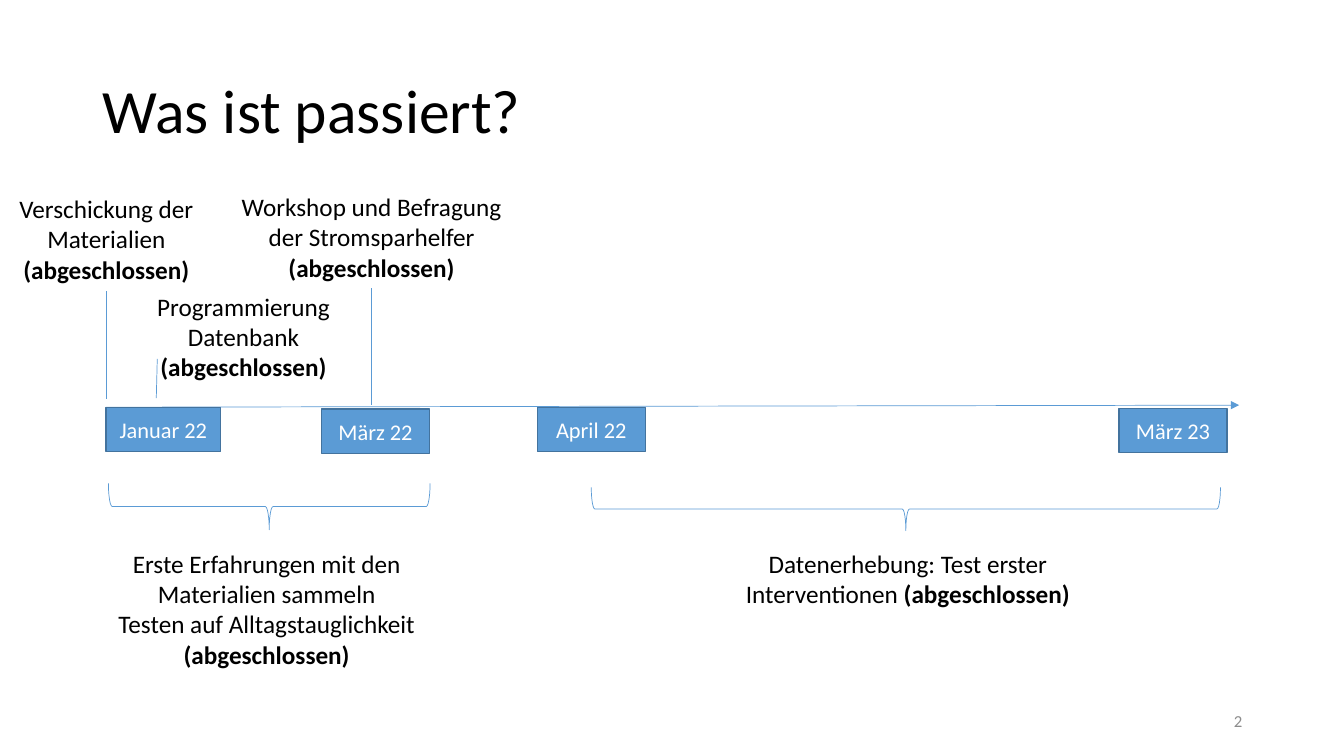
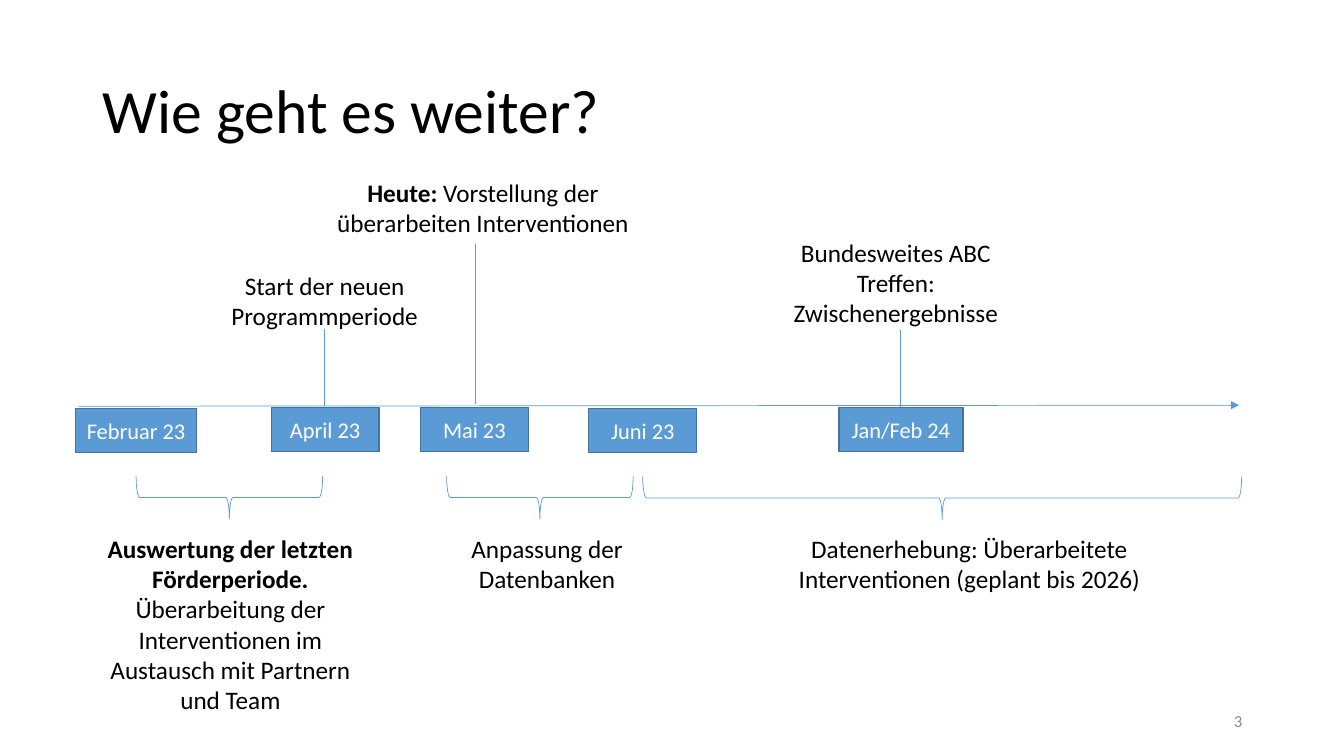
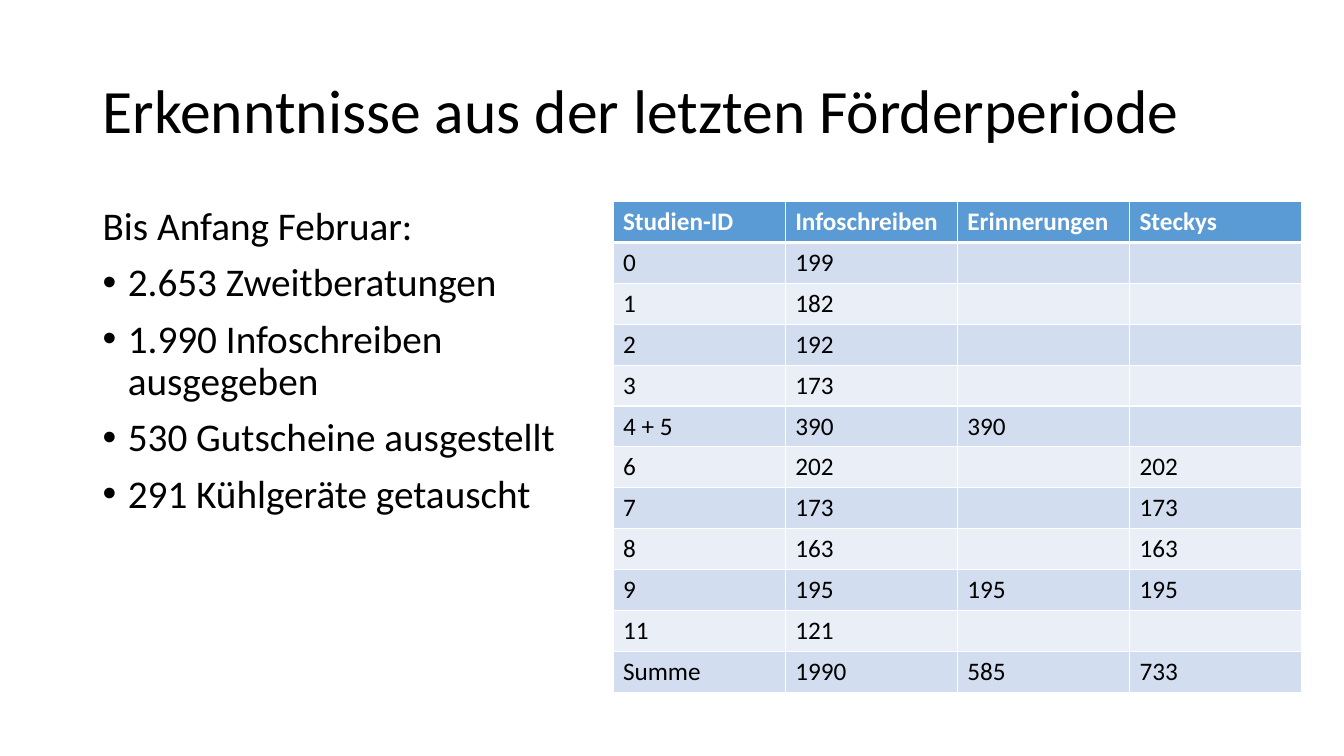
"""Build three slides on the progress of a study: two timelines and a results table."""
from dataclasses import dataclass

from lxml import etree
from pptx import Presentation
from pptx import util as u
from pptx.dml.color import RGBColor
from pptx.enum import shapes, text
from pptx.oxml import ns
from pptx.slide import Slide
from pptx.table import _Cell as Cell
from pptx.text.text import TextFrame, _Paragraph as Paragraph

EMU_PER_PX = 9144
FONT = "Calibri"
BLACK = RGBColor(0x00, 0x00, 0x00)
WHITE = RGBColor(0xFF, 0xFF, 0xFF)
GREY = RGBColor(0x8C, 0x8C, 0x8C)
BLUE = RGBColor(0x5B, 0x9B, 0xD5)
DARK_BLUE = RGBColor(0x43, 0x73, 0x9E)
BAND_COLOURS = (RGBColor(0xEA, 0xEF, 0xF7), RGBColor(0xD2, 0xDE, 0xEF))

CENTER = text.PP_ALIGN.CENTER
MIDDLE = text.MSO_ANCHOR.MIDDLE


@dataclass(frozen=True)
class Box:
    left: int
    top: int
    width: int
    height: int

    def emu(self) -> tuple[int, int, int, int]:
        return px(self.left), px(self.top), px(self.width), px(self.height)


@dataclass(frozen=True)
class Span:
    text: str
    bold: bool = False


@dataclass(frozen=True)
class Caption:
    box: Box
    paragraphs: tuple[tuple[Span, ...], ...]


@dataclass(frozen=True)
class Milestone:
    label: str
    left: int
    top: int = 404
    width: int = 107


@dataclass(frozen=True)
class Line:
    start_x: int
    start_y: int
    end_x: int
    end_y: int


@dataclass(frozen=True)
class Timeline:
    title: str
    number: str
    axis: Line
    milestones: tuple[Milestone, ...]
    markers: tuple[Line, ...]
    braces: tuple[Box, ...]
    captions: tuple[Caption, ...]


TITLE_BOX = Box(92, 40, 1150, 145)
NUMBER_BOX = Box(942, 695, 300, 40)
BULLET_BOX = Box(92, 200, 516, 476)
TABLE_BOX = Box(608, 200, 683, 487)
MILESTONE_HEIGHT = 44
DONE = Span("(abgeschlossen)", True)

TIMELINES = (
    Timeline(
        "Was ist passiert?",
        "2",
        Line(105, 404, 1229, 402),
        (
            Milestone("Januar 22", 105, width=114),
            Milestone("März 22", 319, 406),
            Milestone("April 22", 533),
            Milestone("März 23", 1110, 405),
        ),
        (
            Line(105, 289, 105, 396),
            Line(368, 286, 368, 402),
            Line(156, 356, 155, 395),
        ),
        (Box(108, 479, 319, 46), Box(587, 483, 624, 43)),
        (
            Caption(Box(6, 187, 199, 101), ((Span("Verschickung der Materialien "), DONE),)),
            Caption(Box(219, 185, 299, 101), ((Span("Workshop und Befragung der Stromsparhelfer "), DONE),)),
            Caption(Box(92, 284, 299, 101), ((Span("Programmierung Datenbank "), DONE),)),
            Caption(
                Box(92, 539, 345, 131),
                (
                    (Span("Erste Erfahrungen mit den Materialien sammeln"),),
                    (Span("Testen auf Alltagstauglichkeit\n"), DONE),
                ),
            ),
            Caption(Box(724, 539, 353, 71), ((Span("Datenerhebung: Test erster Interventionen "), DONE),)),
        ),
    ),
    Timeline(
        "Wie geht es weiter?",
        "3",
        Line(78, 403, 1229, 402),
        (
            Milestone("Februar 23", 75, 405, 120),
            Milestone("April 23", 269),
            Milestone("Mai 23", 417),
            Milestone("Juni 23", 584, 405),
            Milestone("Jan/Feb 24", 832, width=123),
        ),
        (
            Line(322, 326, 322, 403),
            Line(471, 242, 471, 401),
            Line(893, 327, 893, 404),
        ),
        (Box(135, 472, 185, 43), Box(443, 472, 185, 43), Box(638, 472, 594, 43)),
        (
            Caption(Box(215, 263, 214, 71), ((Span("Start der neuen Programmperiode"),),)),
            Caption(
                Box(320, 171, 318, 71),
                ((Span("Heute: ", True), Span("Vorstellung der überarbeiten Interventionen")),),
            ),
            Caption(Box(768, 230, 241, 101), ((Span("Bundesweites ABC Treffen: Zwischenergebnisse"),),)),
            Caption(
                Box(79, 524, 299, 192),
                (
                    (Span("Auswertung der letzten Förderperiode.", True),),
                    (Span("Überarbeitung der Interventionen im Austausch mit Partnern und Team"),),
                ),
            ),
            Caption(Box(393, 524, 299, 71), ((Span("Anpassung der Datenbanken"),),)),
            Caption(
                Box(765, 524, 393, 71),
                ((Span("Datenerhebung: Überarbeitete Interventionen (geplant bis 2026)"),),),
            ),
        ),
    ),
)

RESULTS_TITLE = "Erkenntnisse aus der letzten Förderperiode"
RESULTS_INTRO = "Bis Anfang Februar:"
RESULTS_BULLETS = (
    "2.653 Zweitberatungen",
    "1.990 Infoschreiben ausgegeben",
    "530 Gutscheine ausgestellt",
    "291 Kühlgeräte getauscht",
)
RESULTS_ROWS = (
    ("Studien-ID", "Infoschreiben", "Erinnerungen", "Steckys"),
    ("0", "199", "", ""),
    ("1", "182", "", ""),
    ("2", "192", "", ""),
    ("3", "173", "", ""),
    ("4 + 5", "390", "390", ""),
    ("6", "202", "", "202"),
    ("7", "173", "", "173"),
    ("8", "163", "", "163"),
    ("9", "195", "195", "195"),
    ("11", "121", "", ""),
    ("Summe", "1990", "585", "733"),
)


def px(length: int) -> u.Emu:
    return u.Emu(length * EMU_PER_PX)


def style_paragraph(paragraph: Paragraph, size: int, colour: RGBColor = BLACK) -> None:
    paragraph.font.name = FONT
    paragraph.font.size = u.Pt(size)
    paragraph.font.color.rgb = colour


def add_text_frame(slide: Slide, box: Box) -> TextFrame:
    frame = slide.shapes.add_textbox(*box.emu()).text_frame
    frame.word_wrap = True
    return frame


def new_paragraph(frame: TextFrame, index: int) -> Paragraph:
    return frame.add_paragraph() if index else frame.paragraphs[0]


def add_title(slide: Slide, title: str) -> None:
    frame = add_text_frame(slide, TITLE_BOX)
    frame.vertical_anchor = MIDDLE
    paragraph = frame.paragraphs[0]
    paragraph.text = title
    paragraph.line_spacing = 0.9
    style_paragraph(paragraph, 44)


def add_number(slide: Slide, number: str) -> None:
    frame = add_text_frame(slide, NUMBER_BOX)
    frame.vertical_anchor = MIDDLE
    paragraph = frame.paragraphs[0]
    paragraph.text = number
    paragraph.alignment = text.PP_ALIGN.RIGHT
    style_paragraph(paragraph, 12, GREY)


def add_line(slide: Slide, line: Line, arrow: bool = False) -> None:
    connector = slide.shapes.add_connector(
        shapes.MSO_CONNECTOR.STRAIGHT,
        px(line.start_x), px(line.start_y), px(line.end_x), px(line.end_y),
    )
    connector.line.color.rgb = BLUE
    connector.line.width = u.Pt(0.5)
    properties = connector._element.spPr
    if arrow:
        etree.SubElement(properties.find(ns.qn("a:ln")), ns.qn("a:tailEnd"), type="triangle")
    etree.SubElement(properties, ns.qn("a:effectLst"))


def add_milestone(slide: Slide, milestone: Milestone) -> None:
    box = Box(milestone.left, milestone.top, milestone.width, MILESTONE_HEIGHT)
    shape = slide.shapes.add_shape(shapes.MSO_SHAPE.RECTANGLE, *box.emu())
    shape.shadow.inherit = False
    shape.fill.solid()
    shape.fill.fore_color.rgb = BLUE
    shape.line.color.rgb = DARK_BLUE
    shape.line.width = u.Pt(1)
    shape.text_frame.vertical_anchor = MIDDLE
    paragraph = shape.text_frame.paragraphs[0]
    paragraph.text = milestone.label
    paragraph.alignment = CENTER
    style_paragraph(paragraph, 16, WHITE)


def add_brace(slide: Slide, box: Box) -> None:
    """Draw a downward brace that fills the box once it is turned."""
    shift = (box.width - box.height) // 2
    upright = Box(box.left + shift, box.top - shift, box.height, box.width)
    shape = slide.shapes.add_shape(shapes.MSO_SHAPE.LEFT_BRACE, *upright.emu())
    shape.rotation = 270
    shape.shadow.inherit = False
    shape.fill.background()
    shape.line.color.rgb = BLUE
    shape.line.width = u.Pt(0.5)


def add_caption(slide: Slide, caption: Caption) -> None:
    frame = add_text_frame(slide, caption.box)
    frame.auto_size = text.MSO_AUTO_SIZE.SHAPE_TO_FIT_TEXT
    for index, spans in enumerate(caption.paragraphs):
        paragraph = new_paragraph(frame, index)
        paragraph.alignment = CENTER
        style_paragraph(paragraph, 18)
        for span in spans:
            run = paragraph.add_run()
            run.text = span.text.rstrip("\n")
            run.font.bold = span.bold
            if span.text.endswith("\n"):
                paragraph.add_line_break()


def add_timeline(slide: Slide, timeline: Timeline) -> None:
    add_title(slide, timeline.title)
    add_number(slide, timeline.number)
    add_line(slide, timeline.axis, arrow=True)
    for milestone in timeline.milestones:
        add_milestone(slide, milestone)
    for marker in timeline.markers:
        add_line(slide, marker)
    for brace in timeline.braces:
        add_brace(slide, brace)
    for caption in timeline.captions:
        add_caption(slide, caption)


def add_bullets(slide: Slide) -> None:
    frame = add_text_frame(slide, BULLET_BOX)
    for index, line in enumerate((RESULTS_INTRO, *RESULTS_BULLETS)):
        paragraph = new_paragraph(frame, index)
        paragraph.text = line
        paragraph.line_spacing = 0.9
        paragraph.space_before = u.Pt(10)
        if index:
            properties = paragraph._p.get_or_add_pPr()
            properties.set("marL", str(px(25)))
            properties.set("indent", str(px(-25)))
            etree.SubElement(properties, ns.qn("a:buFont"), typeface="Arial")
            etree.SubElement(properties, ns.qn("a:buChar"), char="•")
        style_paragraph(paragraph, 28)


def set_borders(cell: Cell, bottom_width: int) -> None:
    properties = cell._tc.get_or_add_tcPr()
    for side, width in (("L", 1), ("R", 1), ("T", 1), ("B", bottom_width)):
        border = etree.SubElement(properties, ns.qn(f"a:ln{side}"), w=str(u.Pt(width)))
        fill = etree.SubElement(border, ns.qn("a:solidFill"))
        etree.SubElement(fill, ns.qn("a:srgbClr"), val=str(WHITE))


def add_results_table(slide: Slide) -> None:
    table = slide.shapes.add_table(
        len(RESULTS_ROWS), len(RESULTS_ROWS[0]), *TABLE_BOX.emu()
    ).table
    for row_index, row in enumerate(RESULTS_ROWS):
        header = row_index == 0
        for column_index, value in enumerate(row):
            cell = table.cell(row_index, column_index)
            set_borders(cell, 3 if header else 1)
            cell.fill.solid()
            cell.fill.fore_color.rgb = BLUE if header else BAND_COLOURS[row_index % 2]
            paragraph = cell.text_frame.paragraphs[0]
            paragraph.text = value
            paragraph.font.bold = header
            style_paragraph(paragraph, 18, WHITE if header else BLACK)


def main() -> None:
    presentation = Presentation()
    presentation.slide_width = px(1333)
    presentation.slide_height = px(750)
    blank = presentation.slide_layouts[6]
    for timeline in TIMELINES:
        add_timeline(presentation.slides.add_slide(blank), timeline)
    results = presentation.slides.add_slide(blank)
    add_title(results, RESULTS_TITLE)
    add_bullets(results)
    add_results_table(results)
    presentation.save("out.pptx")


if __name__ == "__main__":
    main()
